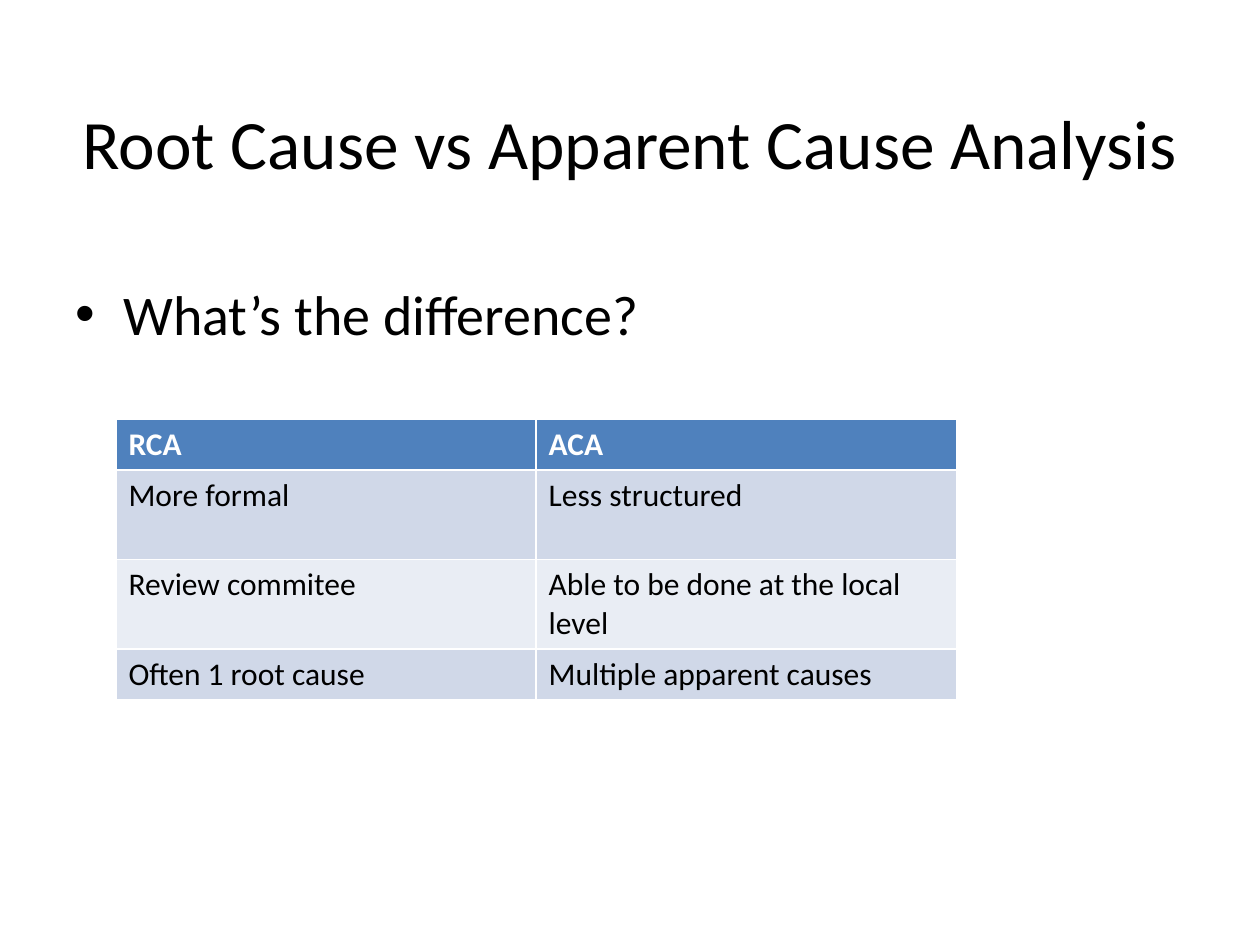
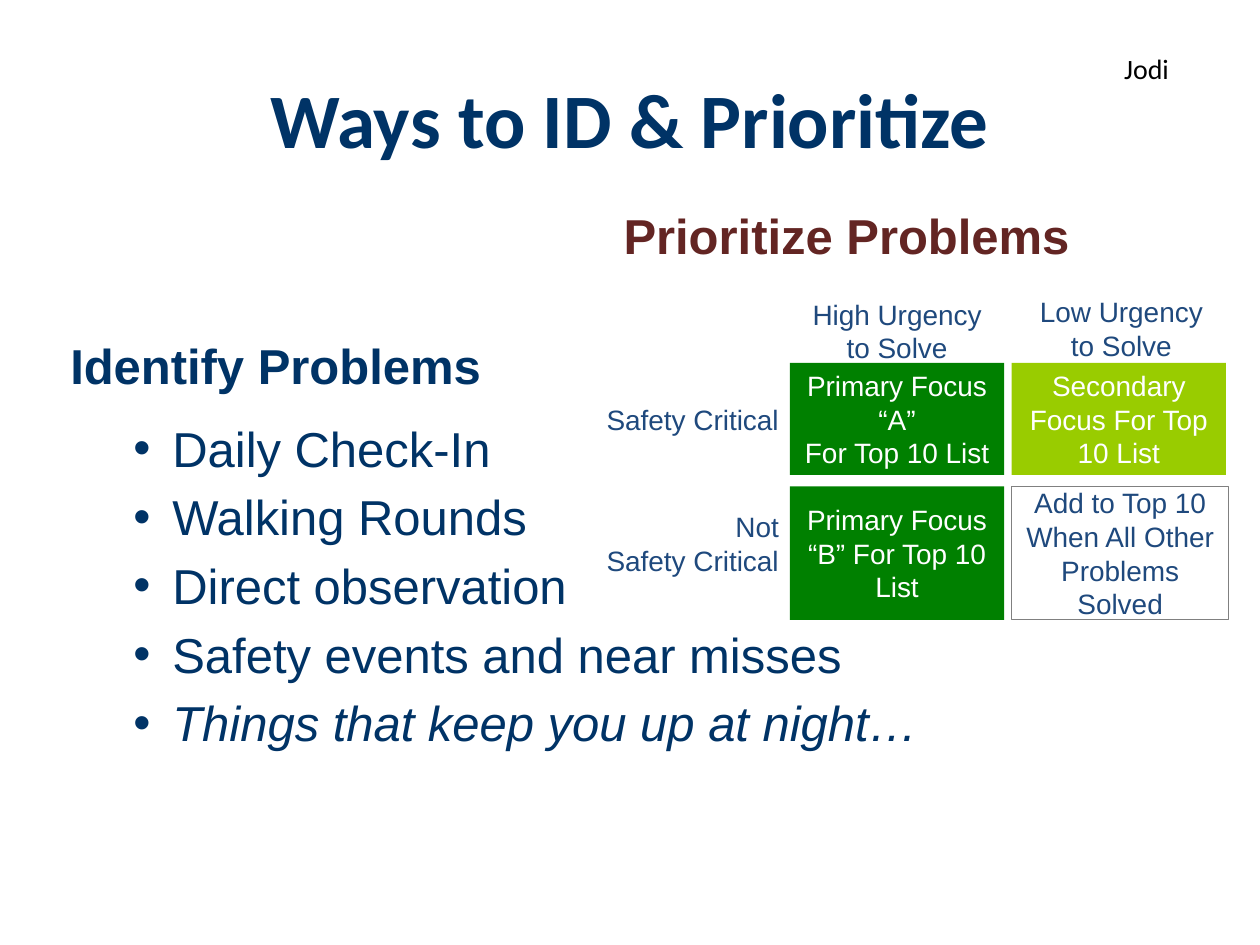
import pptx
import pptx.dml.color
import pptx.enum.shapes
import pptx.enum.text
import pptx.oxml.ns
import pptx.util
from lxml import etree

Inches, Pt = pptx.util.Inches, pptx.util.Pt
ALIGN = pptx.enum.text.PP_ALIGN
ANCHOR = pptx.enum.text.MSO_ANCHOR

# Shared palette
BLACK, WHITE = "000000", "FFFFFF"
NAVY, BLUE, MAROON = "003366", "1F497D", "632523"
GREEN, LIME, GREY = "008000", "99CC00", "808080"
HEADER, BAND_DARK, BAND_LIGHT = "4F81BD", "D0D8E8", "E9EDF4"


def rgb(value):
    return pptx.dml.color.RGBColor.from_string(value)


def add_text(tf, lines, size, font, color, align=ALIGN.LEFT, anchor=ANCHOR.TOP,
             bold=False, bullet=None, before=0):
    """Write lines into tf; bullet is (left margin, hanging indent) in inches."""
    tf.word_wrap = True
    tf.vertical_anchor = anchor
    for line in lines:
        p = tf.paragraphs[0]
        if p.runs:
            p = tf.add_paragraph()
            p.space_before = Pt(before)
        p.alignment = align
        if bullet:
            pPr = p._p.get_or_add_pPr()
            pPr.set("marL", str(Inches(bullet[0])))
            pPr.set("indent", str(-Inches(bullet[1])))
            etree.SubElement(pPr, pptx.oxml.ns.qn("a:buFont")).set("typeface", "Arial")
            etree.SubElement(pPr, pptx.oxml.ns.qn("a:buChar")).set("char", "•")
        r = p.add_run()
        r.text = line
        r.font.size = Pt(size)
        r.font.name = font
        r.font.bold = bold
        r.font.color.rgb = rgb(color)


prs = pptx.Presentation()
prs.slide_width, prs.slide_height = Inches(10), Inches(7.5)

# Slides and their titles: text, box, size, colour, bold
titles = [
    ("Root Cause vs Apparent Cause Analysis", (0.5, 0.5, 9, 1.25), 39.6, BLACK, False),
    ("Ways to ID & Prioritize", (0, 0.25, 10, 1.37), 44, NAVY, True),
]
slides = []
for text, box, size, color, bold in titles:
    s = prs.slides.add_slide(prs.slide_layouts[6])
    tb = s.shapes.add_textbox(*map(Inches, box))
    add_text(tb.text_frame, [text], size, "Calibri", color, ALIGN.CENTER, ANCHOR.MIDDLE, bold)
    slides.append(s)
causes, priorities = slides

# Slide 1: question
tb = causes.shapes.add_textbox(Inches(0.5), Inches(2.17), Inches(9), Inches(4.95))
add_text(tb.text_frame, ["What’s the difference?"], 32, "Calibri", BLACK, bullet=(0.38, 0.38))

# Slide 1: comparison table
rows = [
    ("RCA", "ACA"),
    ("More formal", "Less structured"),
    ("Review commitee", "Able to be done at the local level"),
    ("Often 1 root cause", "Multiple apparent causes"),
]
heights = [0.4, 0.71, 0.71, 0.4]
table = causes.shapes.add_table(len(rows), 2, Inches(0.92), Inches(3.33),
                                Inches(6.67), Inches(sum(heights))).table
for i, row in enumerate(rows):
    table.rows[i].height = Inches(heights[i])
    fill = HEADER if i == 0 else BAND_DARK if i % 2 else BAND_LIGHT
    for j, text in enumerate(row):
        cell = table.cell(i, j)
        cell.fill.solid()
        cell.fill.fore_color.rgb = rgb(fill)
        p = cell.text_frame.paragraphs[0]
        r = p.add_run()
        r.text = text
        r.font.size = Pt(18)
        r.font.name = "Calibri"
        r.font.bold = i == 0
        r.font.color.rgb = rgb(WHITE if i == 0 else BLACK)

# Slide 2: ways to identify problems
tb = priorities.shapes.add_textbox(Inches(0.46), Inches(2.61), Inches(8.1), Inches(3.77))
tf = tb.text_frame
add_text(tf, ["Identify Problems"], 28, "Arial", NAVY, bold=True)
tf.paragraphs[0].space_after = Pt(8.4)
ways = ["Daily Check-In", "Walking Rounds", "Direct observation",
        "Safety events and near misses", "Things that keep you up at night…"]
add_text(tf, ways, 28, "Arial", NAVY, bullet=(0.81, 0.31), before=5.6)
tf.paragraphs[-1].runs[0].font.italic = True

# Slide 2: presenter and matrix heading
tb = priorities.shapes.add_textbox(Inches(8.56), Inches(0.36), Inches(1.08), Inches(0.37))
add_text(tb.text_frame, ["Jodi"], 16, "Calibri", BLACK, ALIGN.CENTER)
tb = priorities.shapes.add_textbox(Inches(4.85), Inches(1.58), Inches(3.78), Inches(0.57))
add_text(tb.text_frame, ["Prioritize Problems"], 28, "Arial", MAROON, bold=True)
tb.text_frame.word_wrap = False

# Slide 2: matrix labels
labels = [
    (["High Urgency", "to Solve"], 6.27, 2.37, 0.51, ALIGN.CENTER),
    (["Low Urgency", "to Solve"], 8.05, 2.35, 0.51, ALIGN.CENTER),
    (["Safety Critical"], 4.58, 3.01, 0.64, ALIGN.RIGHT),
    (["Not", "Safety Critical"], 4.58, 3.99, 0.64, ALIGN.RIGHT),
]
for lines, left, top, height, align in labels:
    tb = priorities.shapes.add_textbox(Inches(left), Inches(top), Inches(1.7), Inches(height))
    add_text(tb.text_frame, lines, 16, "Arial", BLUE, align, ANCHOR.MIDDLE)

# Slide 2: matrix cells, with no fill for the lowest priority
matrix = [
    (2.88, 0.89, [(["Primary Focus “A”", "For Top 10 List"], GREEN),
                  (["Secondary Focus For Top 10 List"], LIME)]),
    (3.86, 1.06, [(["Primary Focus “B” For Top 10 List"], GREEN),
                  (["Add to Top 10 When All Other Problems Solved"], None)]),
]
for top, height, cells in matrix:
    for left, (lines, fill) in zip((6.27, 8.03), cells):
        width = 1.7 if fill else 1.72
        sp = priorities.shapes.add_shape(pptx.enum.shapes.MSO_SHAPE.RECTANGLE, Inches(left),
                                         Inches(top), Inches(width), Inches(height))
        sp.shadow.inherit = False
        if fill:
            sp.fill.solid()
            sp.fill.fore_color.rgb = rgb(fill)
            sp.line.fill.background()
        else:
            sp.fill.background()
            sp.line.color.rgb = rgb(GREY)
            sp.line.width = Pt(0.75)
        add_text(sp.text_frame, lines, 16, "Arial", WHITE if fill else BLUE,
                 ALIGN.CENTER, ANCHOR.MIDDLE)

prs.save("out.pptx")
